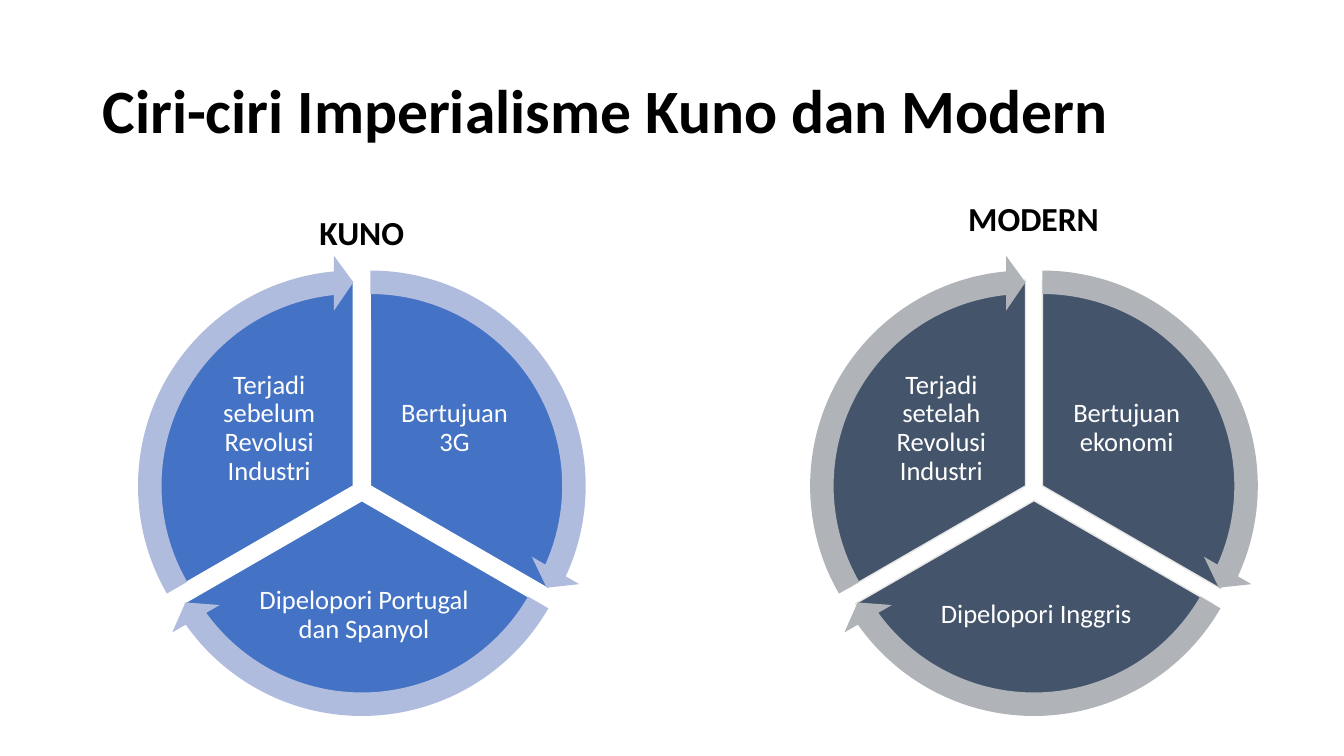
from dataclasses import dataclass
from math import cos, radians, sin

from pptx import Presentation
from pptx.dml.color import RGBColor
from pptx.enum.shapes import MSO_SHAPE as Preset
from pptx.enum.text import MSO_ANCHOR as Anchor, PP_ALIGN as Align
from pptx.util import Pt


@dataclass(frozen=True)
class Theme:
    font: str = "Calibri"
    black: str = "000000"
    white: str = "FFFFFF"
    blue: str = "4472C4"
    pale_blue: str = "B0BCDE"
    slate: str = "44546A"
    pale_slate: str = "B0B4B9"
    pale_gray: str = "E7E6E6"
    title_size: int = 44
    heading_size: int = 24
    label_size: int = 19


THEME = Theme()
ADJ_PER_DEGREE = 0.6  # angle adjustments count 60000ths of a degree in units of 100000
PIE_SIZE, ARROW_SIZE = 294, 330
EXPLODE = 7           # distance of each sector from the hub
HEAD_ANGLE = 5.46     # angle taken up by an arrowhead

# Start angle, end angle, label box relative to the hub (left, top, width, height)
SECTORS = [
    (270, 30, (13.7, -88, 105, 87)),
    (30, 150, (-77, 50.4, 157, 77)),
    (150, 270, (-118.7, -88, 105, 87)),
]


def write(frame, text, size, color, align, anchor, bold=False):
    frame.word_wrap = True
    frame.vertical_anchor = anchor
    paragraph = frame.paragraphs[0]
    paragraph.alignment = align
    paragraph.line_spacing = 0.9
    run = paragraph.add_run()
    run.text = text
    run.font.name = THEME.font
    run.font.size = Pt(size)
    run.font.bold = bold
    run.font.color.rgb = RGBColor.from_string(color)


def add_title(slide, box, text):
    title = slide.shapes.title
    title.left, title.top, title.width, title.height = map(Pt, box)
    write(title.text_frame, text, THEME.title_size, THEME.black,
          Align.LEFT, Anchor.MIDDLE, bold=True)


def add_heading(slide, box, text, bottom_inset):
    heading = slide.shapes.add_textbox(*map(Pt, box)).text_frame
    heading.margin_bottom = Pt(bottom_inset)
    write(heading, text, THEME.heading_size, THEME.black,
          Align.CENTER, Anchor.BOTTOM, bold=True)


def add_label(group, box, text):
    label = group.shapes.add_textbox(*map(Pt, box)).text_frame
    label.margin_left = label.margin_right = Pt(2)
    label.margin_top = label.margin_bottom = Pt(2)
    write(label, text, THEME.label_size, THEME.white, Align.CENTER, Anchor.MIDDLE)


def add_round(group, preset, center, size, color, adjustments):
    x, y = center
    part = group.shapes.add_shape(
        preset, Pt(x - size / 2), Pt(y - size / 2), Pt(size), Pt(size))
    for index, value in enumerate(adjustments):
        part.adjustments[index] = value
    part.shadow.inherit = False
    part.fill.solid()
    part.fill.fore_color.rgb = RGBColor.from_string(color)
    part.line.fill.background()
    return part


def add_wheel(slide, box, labels, sector_color, edge_color, arrow_color):
    left, top, width, height = box
    hub_x, hub_y = left + width / 2, top + height / 2
    group = slide.shapes.add_group_shape()
    centers = []

    # Sectors, each pushed out along its middle angle, with their labels
    for (start, end, (dx, dy, w, h)), text in zip(SECTORS, labels):
        middle = radians(start + 60)
        center = hub_x + EXPLODE * cos(middle), hub_y + EXPLODE * sin(middle)
        centers.append(center)
        sector = add_round(group, Preset.PIE, center, PIE_SIZE, sector_color,
                           [start * ADJ_PER_DEGREE, end * ADJ_PER_DEGREE])
        sector.line.color.rgb = RGBColor.from_string(edge_color)
        sector.line.width = Pt(1)
        add_label(group, (hub_x + dx, hub_y + dy, w, h), text)

    # Arrows around the sectors
    for (start, end, _), center in zip(SECTORS, centers):
        add_round(group, Preset.CIRCULAR_ARROW, center, ARROW_SIZE, arrow_color,
                  [0.05085, HEAD_ANGLE * ADJ_PER_DEGREE,
                   (end - HEAD_ANGLE) * ADJ_PER_DEGREE,
                   start * ADJ_PER_DEGREE, 0.0593])


def main():
    deck = Presentation()
    deck.slide_width, deck.slide_height = Pt(960), Pt(540)
    slide = deck.slides.add_slide(deck.slide_layouts[5])

    add_title(slide, (66, 28.8, 828, 104.4), "Ciri-ciri Imperialisme Kuno dan Modern")

    # Ancient imperialism
    add_heading(slide, (55.4, 145.4, 406, 64.8), "KUNO", 29.6)
    add_wheel(slide, (93.5, 185.6, ARROW_SIZE, ARROW_SIZE),
              ["Bertujuan 3G", "Dipelopori Portugal dan Spanyol",
               "Terjadi sebelum Revolusi Industri"],
              THEME.blue, THEME.white, THEME.pale_blue)

    # Modern imperialism
    add_heading(slide, (534.2, 109.4, 408.2, 64.8), "MODERN", 3.6)
    add_wheel(slide, (573.6, 185.6, ARROW_SIZE, ARROW_SIZE),
              ["Bertujuan ekonomi", "Dipelopori Inggris",
               "Terjadi setelah Revolusi Industri"],
              THEME.slate, THEME.pale_gray, THEME.pale_slate)

    deck.save("out.pptx")


if __name__ == "__main__":
    main()
